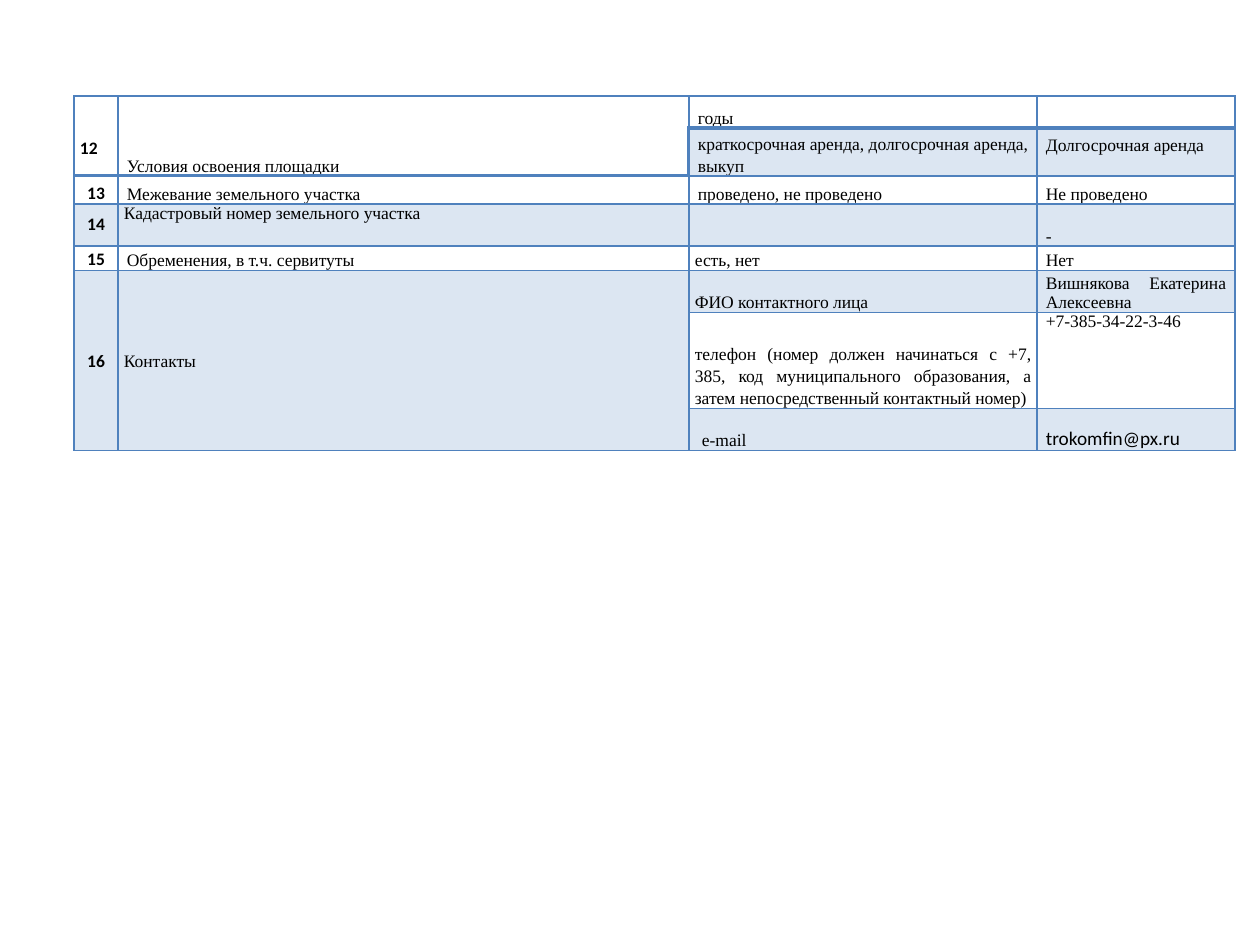
"""Build a slide with a table of land plot terms and contacts."""
from lxml.etree import SubElement
from pptx import Presentation
from pptx.dml.color import RGBColor
from pptx.enum.text import MSO_ANCHOR, PP_ALIGN
from pptx.oxml.ns import qn
from pptx.util import Pt

PX = 914400 // 126
THEME = {
    "line": "4F81BD", "band": RGBColor.from_string("DCE6F2"),
    "ink": RGBColor(0, 0, 0), "serif": "Times New Roman", "sans": "Calibri",
    "size": Pt(10), "mail": Pt(11), "thin": Pt(1), "thick": Pt(2),
}
TOP, MID, LOW = MSO_ANCHOR.TOP, MSO_ANCHOR.MIDDLE, MSO_ANCHOR.BOTTOM
LEFT, MIDST, FULL = PP_ALIGN.LEFT, PP_ALIGN.CENTER, PP_ALIGN.JUSTIFY
WIDTHS = [44, 571, 348, 198]
HEIGHTS = [32, 48, 28, 42, 24, 42, 96, 42]
MERGED = {0: 1, 5: 7}
BANDS = {(1, 2), (1, 3), (7, 2), (7, 3)} | {(r, c) for r in (3, 5) for c in range(4)}
THICK = {(0, 2, "B"), (0, 3, "B"), (1, 2, "T"), (1, 3, "T"), (1, 2, "L"),
         (0, 0, "B"), (0, 1, "B"), (1, 0, "B"), (1, 1, "B"), (2, 0, "T"), (2, 1, "T")}
# row, column: text, anchor, alignment, left, right and bottom inset, line spacing
CELLS = {
    (0, 0): ("12", LOW, LEFT, 6, 6, 17, 1.15),
    (0, 1): ("Условия освоения площадки", LOW, LEFT, 9, 9, 0, 1.15),
    (0, 2): ("годы", LOW, FULL, 9, 9, 0, 1.15),
    (1, 2): ("краткосрочная аренда, долгосрочная аренда, выкуп", LOW, FULL, 9, 9, 0, 1.15),
    (1, 3): ("Долгосрочная аренда", LOW, FULL, 9, 9, 21, 1),
    (2, 0): ("13", LOW, MIDST, 9, 9, 0, 1.15),
    (2, 1): ("Межевание земельного участка", LOW, LEFT, 9, 9, 0, 1.15),
    (2, 2): ("проведено, не проведено", LOW, LEFT, 9, 9, 0, 1.15),
    (2, 3): ("Не проведено", LOW, FULL, 9, 9, 0, 1),
    (3, 0): ("14", MID, MIDST, 6, 6, 0, 1),
    (3, 1): ("Кадастровый номер земельного участка", TOP, LEFT, 6, 6, 0, 1),
    (3, 3): ("-", LOW, FULL, 9, 9, 0, 1),
    (4, 0): ("15", MID, MIDST, 6, 6, 0, 1.15),
    (4, 1): ("Обременения, в т.ч. сервитуты", LOW, LEFT, 9, 9, 0, 1.15),
    (4, 2): ("есть, нет", LOW, FULL, 6, 6, 0, 1.15),
    (4, 3): ("Нет", LOW, FULL, 9, 9, 0, 1),
    (5, 0): ("16", MID, MIDST, 6, 6, 0, 1.15),
    (5, 1): ("Контакты", MID, LEFT, 6, 6, 0, 1.15),
    (5, 2): ("ФИО контактного лица", LOW, FULL, 6, 6, 0, 1.15),
    (5, 3): ("Вишнякова Екатерина Алексеевна", LOW, FULL, 9, 9, 0, 1),
    (6, 2): ("телефон (номер должен начинаться с +7, 385, код муниципального образования, "
             "а затем непосредственный контактный номер) ", LOW, FULL, 6, 6, 0, 1.15),
    (6, 3): ("+7-385-34-22-3-46", TOP, LEFT, 9, 9, 0, 1),
    (7, 2): ("e-mail", LOW, FULL, 13, 9, 0, 1.15),
    (7, 3): ("trokomfin@px.ru", LOW, FULL, 9, 9, 0, 1),
}


def apply(item, values):
    for name, value in values.items():
        setattr(item, name, value)


def edge(cell, side, width):
    line = SubElement(cell._tc.get_or_add_tcPr(), qn(f"a:ln{side}"), w=str(width))
    fill = SubElement(line, qn("a:solidFill"))
    SubElement(fill, qn("a:srgbClr"), val=THEME["line"])


deck = Presentation()
apply(deck, {"slide_width": 1260 * PX, "slide_height": 945 * PX})
slide = deck.slides.add_slide(deck.slide_layouts[6])
frame = slide.shapes.add_table(len(HEIGHTS), len(WIDTHS), 74 * PX, 96 * PX,
                               sum(WIDTHS) * PX, sum(HEIGHTS) * PX)
table = frame.table
apply(table, {"first_row": False, "horz_banding": False})
for col, width in zip(table.columns, WIDTHS):
    col.width = width * PX
for row, height in zip(table.rows, HEIGHTS):
    row.height = height * PX

for r in range(len(HEIGHTS)):
    for c in range(len(WIDTHS)):
        cell = table.cell(r, c)
        text, anchor, align, left, right, base, space = CELLS.get(
            (r, c), ("", LOW, LEFT, 9, 9, 0, 1))
        apply(cell, {"vertical_anchor": anchor, "margin_left": left * PX,
                     "margin_right": right * PX, "margin_top": 0,
                     "margin_bottom": base * PX})
        for side in "LRTB":
            edge(cell, side, THEME["thick" if (r, c, side) in THICK else "thin"])
        if (r, c) in BANDS:
            cell.fill.solid()
            cell.fill.fore_color.rgb = THEME["band"]
        else:
            cell.fill.background()
        para = cell.text_frame.paragraphs[0]
        apply(para, {"alignment": align, "line_spacing": space})
        if text:
            mail = "@" in text
            run = para.add_run()
            run.text = text
            apply(run.font, {"size": THEME["mail" if mail else "size"],
                             "name": THEME["sans" if mail or c == 0 else "serif"],
                             "bold": c == 0})
            run.font.color.rgb = THEME["ink"]
        else:
            SubElement(para._p, qn("a:endParaRPr"), sz="1000")

for first, last in MERGED.items():
    for c in range(2):
        table.cell(first, c).merge(table.cell(last, c))

deck.save("out.pptx")
